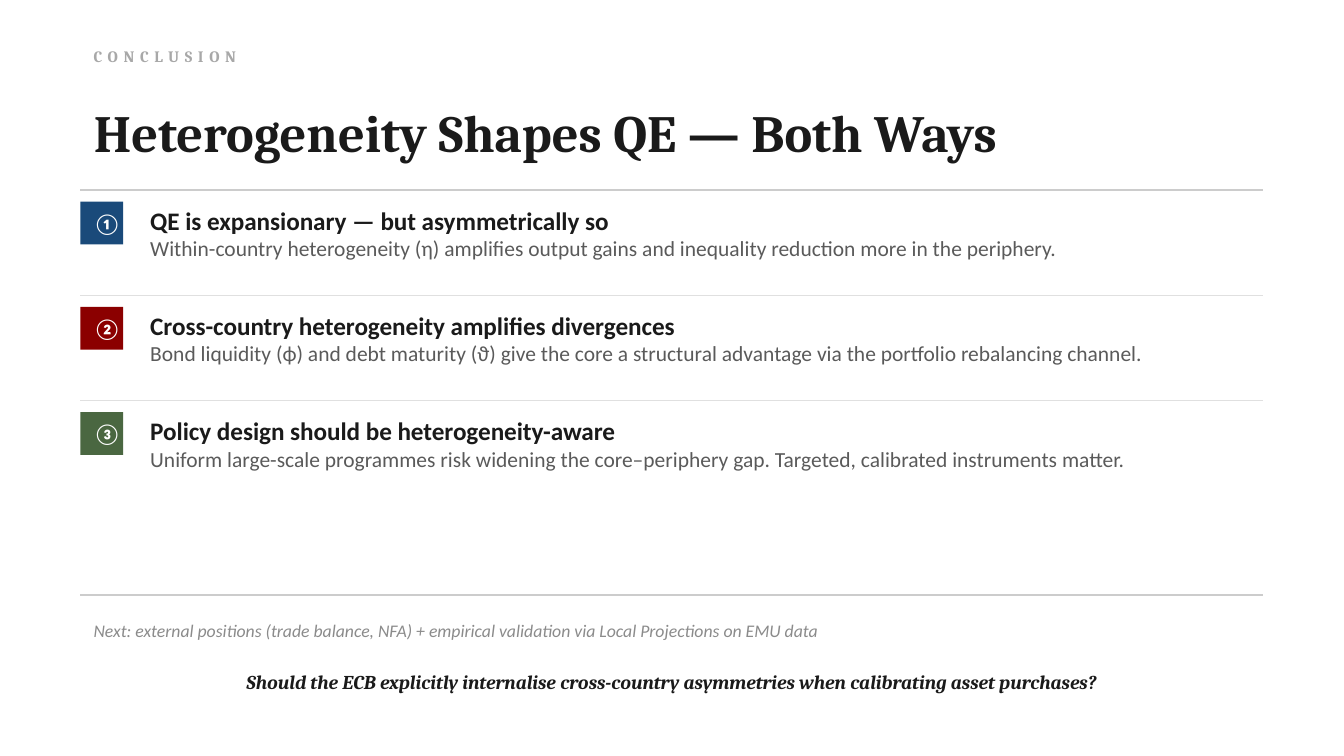
import dataclasses

import pptx
import pptx.dml.color
import pptx.enum.shapes
import pptx.enum.text
import pptx.oxml
import pptx.oxml.ns
import pptx.util

Cm = pptx.util.Cm
ALIGN = pptx.enum.text.PP_ALIGN
ANCHOR = pptx.enum.text.MSO_ANCHOR


@dataclasses.dataclass(frozen=True)
class Style:
    font: str
    size: float
    color: str
    bold: bool = False
    italic: bool = False
    spacing: int = 0


@dataclasses.dataclass(frozen=True)
class Theme:
    kicker: Style = Style("Cambria", 8.5, "A8A8A8", bold=True, spacing=300)
    title: Style = Style("Cambria", 28, "1A1A1A", bold=True)
    badge: Style = Style("Calibri", 11, "FFFFFF", bold=True)
    heading: Style = Style("Calibri", 13.5, "1A1A1A", bold=True)
    body: Style = Style("Calibri", 11.5, "5A5A5A")
    outlook: Style = Style("Calibri", 9.5, "8B8B8B", italic=True)
    question: Style = Style("Cambria", 10.5, "1A1A1A", bold=True, italic=True)
    strong_rule: str = "CCCCCC"
    light_rule: str = "E0E0E0"


@dataclasses.dataclass(frozen=True)
class Finding:
    number: str
    color: str
    heading: str
    body: str


THEME = Theme()
LEFT, WIDTH = 1.52, 22.35
FIRST_ROW, ROW_PITCH = 3.81, 1.99
BADGE_SIZE = 0.81
RULE_GAP = 0.22

FINDINGS = [
    Finding("①", "1A4A7A", "QE is expansionary — but asymmetrically so",
            "Within-country heterogeneity (η) amplifies output gains and inequality "
            "reduction more in the periphery."),
    Finding("②", "8B0000", "Cross-country heterogeneity amplifies divergences",
            "Bond liquidity (ϕ) and debt maturity (ϑ) give the core a structural "
            "advantage via the portfolio rebalancing channel."),
    Finding("③", "4A6741", "Policy design should be heterogeneity-aware",
            "Uniform large-scale programmes risk widening the core–periphery gap. "
            "Targeted, calibrated instruments matter."),
]


def rgb(color: str) -> pptx.dml.color.RGBColor:
    return pptx.dml.color.RGBColor.from_string(color)


def write(shape, lines: list[tuple[str, Style]], align=ALIGN.LEFT, anchor=ANCHOR.MIDDLE) -> None:
    frame = shape.text_frame
    frame.word_wrap = True
    frame.auto_size = pptx.enum.text.MSO_AUTO_SIZE.NONE
    frame.vertical_anchor = anchor
    for index, (text, style) in enumerate(lines):
        para = frame.add_paragraph() if index else frame.paragraphs[0]
        para.alignment = align
        span = para.add_run()
        span.text = text
        span.font.name = style.font
        span.font.size = pptx.util.Pt(style.size)
        span.font.bold = style.bold
        span.font.italic = style.italic
        span.font.color.rgb = rgb(style.color)
        if style.spacing:
            span.font._element.set("spc", str(style.spacing))


def add_text(page, left: float, top: float, width: float, height: float,
             lines: list[tuple[str, Style]], align=ALIGN.LEFT, anchor=ANCHOR.MIDDLE) -> None:
    box = page.shapes.add_textbox(Cm(left), Cm(top), Cm(width), Cm(height))
    write(box, lines, align, anchor)


def add_rule(page, top: float, color: str, weight: float) -> None:
    rule = page.shapes.add_connector(
        pptx.enum.shapes.MSO_CONNECTOR.STRAIGHT, Cm(LEFT), Cm(top), Cm(LEFT + WIDTH), Cm(top))
    rule.line.color.rgb = rgb(color)
    rule.line.width = pptx.util.Pt(weight)
    properties = rule._element.spPr
    properties.append(pptx.oxml.parse_xml(f"<a:effectLst {pptx.oxml.ns.nsdecls('a')}/>"))


def add_finding(page, finding: Finding, top: float) -> None:
    badge = page.shapes.add_shape(
        pptx.enum.shapes.MSO_SHAPE.RECTANGLE, Cm(LEFT), Cm(top), Cm(BADGE_SIZE), Cm(BADGE_SIZE))
    badge.shadow.inherit = False
    badge.fill.solid()
    badge.fill.fore_color.rgb = rgb(finding.color)
    badge.line.fill.background()
    write(badge, [(finding.number, THEME.badge)], ALIGN.CENTER)
    indent = 1.07
    add_text(page, LEFT + indent, top - 0.06, WIDTH - indent, 1.68,
             [(finding.heading, THEME.heading), (finding.body, THEME.body)], anchor=ANCHOR.TOP)


def main() -> None:
    deck = pptx.Presentation()
    deck.slide_width, deck.slide_height = Cm(25.4), Cm(14.29)
    page = deck.slides.add_slide(deck.slide_layouts[5])

    title = page.shapes.title
    title.left, title.top, title.width, title.height = Cm(LEFT), Cm(1.5), Cm(WIDTH), Cm(1.96)
    write(title, [("Heterogeneity Shapes QE — Both Ways", THEME.title)])
    add_text(page, LEFT, 0.71, 22.86, 0.71, [("CONCLUSION", THEME.kicker)])

    for index, finding in enumerate(FINDINGS):
        top = FIRST_ROW + index * ROW_PITCH
        color, weight = (THEME.light_rule, 0.5) if index else (THEME.strong_rule, 0.75)
        add_rule(page, top - RULE_GAP, color, weight)
        add_finding(page, finding, top)

    add_rule(page, 11.25, THEME.strong_rule, 0.75)
    add_text(page, LEFT, 11.48, 15.27, 0.86,
             [("Next: external positions (trade balance, NFA) + empirical validation "
               "via Local Projections on EMU data", THEME.outlook)])
    add_text(page, LEFT, 12.4, WIDTH, 0.99,
             [("Should the ECB explicitly internalise cross-country asymmetries "
               "when calibrating asset purchases?", THEME.question)], ALIGN.CENTER)

    deck.save("out.pptx")


if __name__ == "__main__":
    main()
